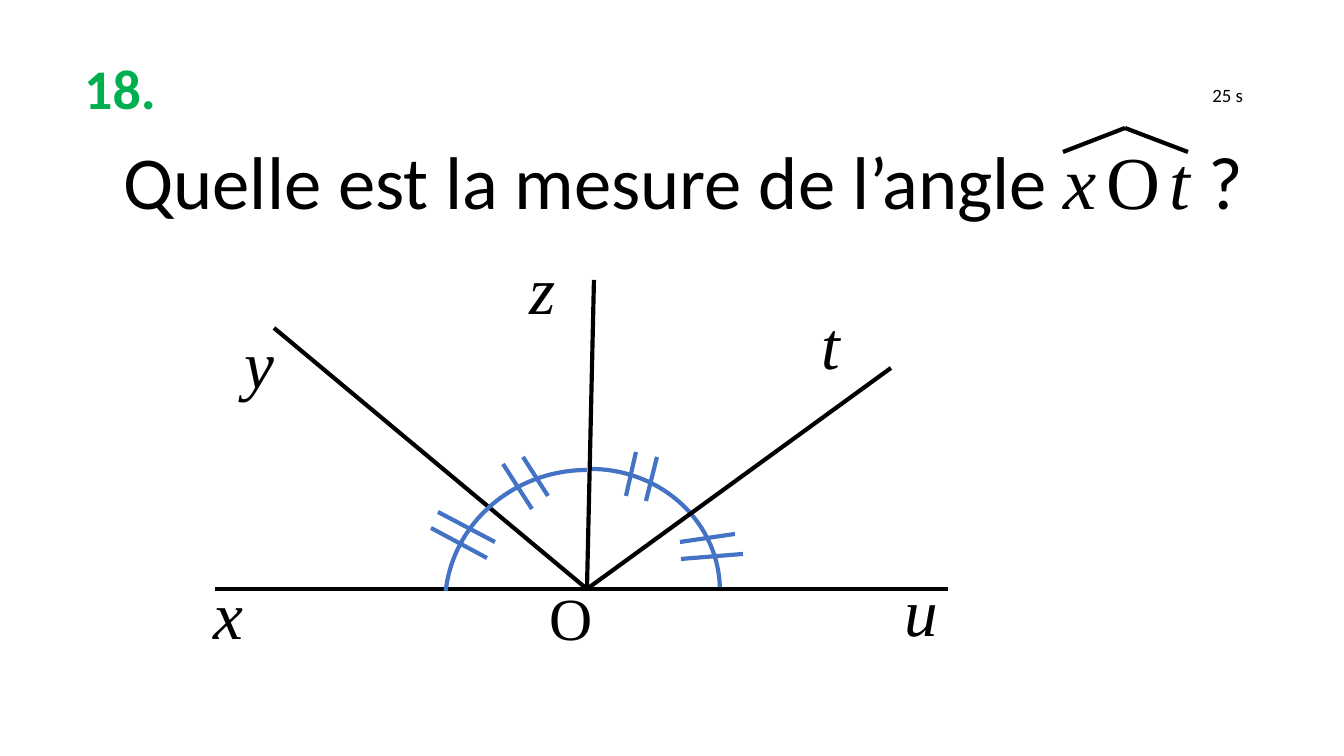
from lxml import etree
from pptx import Presentation
from pptx import util as u
from pptx.dml.color import RGBColor
from pptx.enum import shapes, text
from pptx.oxml.ns import qn

EMU_PER_PX = 914400 / 134.4
SANS, SERIF = "Calibri", "Times New Roman"
BLACK, GREEN, BLUE = "000000", "00B050", "4472C4"


def px(length):
    return u.Emu(round(length * EMU_PER_PX))


def color(code):
    return RGBColor.from_string(code)


class Sketch:
    """Holds the line style and the slide being drawn."""

    line_width = u.Pt(2.25)

    def __init__(self, page):
        self.page = page

    def style_span(self, span, size, font=SANS, ink=BLACK, bold=False, italic=False):
        span.font.size, span.font.name = u.Pt(size), font
        span.font.bold, span.font.italic = bold, italic
        span.font.color.rgb = color(ink)

    def title(self, left, top, width, height, pieces):
        """Fill the title from (words, size, font, italic) pieces."""
        box = self.page.shapes.title
        box.left, box.top, box.width, box.height = map(px, (left, top, width, height))
        frame = box.text_frame
        frame.word_wrap = True
        frame.auto_size = text.MSO_AUTO_SIZE.NONE
        frame.vertical_anchor = text.MSO_ANCHOR.MIDDLE
        para = frame.paragraphs[0]
        para.alignment = text.PP_ALIGN.CENTER
        for words, size, font, italic in pieces:
            span = para.add_run()
            span.text = words
            self.style_span(span, size, font, italic=italic)

    def label(self, left, top, width, height, words, size, wrap=True, **style):
        box = self.page.shapes.add_textbox(*map(px, (left, top, width, height)))
        frame = box.text_frame
        frame.word_wrap = wrap
        frame.text = words
        self.style_span(frame.paragraphs[0].runs[0], size, **style)

    def line(self, start, end, ink=BLACK):
        line = self.page.shapes.add_connector(
            shapes.MSO_CONNECTOR.STRAIGHT, *map(px, (*start, *end)))
        line.line.width = self.line_width
        line.line.color.rgb = color(ink)
        etree.SubElement(line._element.spPr, qn("a:effectLst"))

    def arc(self, left, top, width, height, end_degrees=360, mirrored=False):
        """Draw clockwise from the top to end_degrees, then mirror if asked."""
        arc = self.page.shapes.add_shape(
            shapes.MSO_SHAPE.ARC, *map(px, (left, top, width, height)))
        arc.shadow.inherit = False
        arc.fill.background()
        arc.line.width = self.line_width
        arc.line.color.rgb = color(BLUE)
        # Angles are stored in 1/60000 degree, adjustments in units of 100000.
        arc.adjustments[0] = 270 * 0.6
        arc.adjustments[1] = end_degrees % 360 * 0.6
        if mirrored:
            arc._element.spPr.xfrm.set("flipH", "1")


def main():
    deck = Presentation()
    deck.slide_width, deck.slide_height = px(1344), px(756)
    page = deck.slides.add_slide(deck.slide_layouts[5])
    sketch = Sketch(page)

    sketch.label(71, 47, 99, 82, "18.", 30, wrap=False, ink=GREEN, bold=True)
    sketch.label(1195, 77, 78, 36, " 25 s", 10.1)
    sketch.title(43, 128, 1281, 104, [
        ("Quelle est la mesure de l’angle ", 40, SANS, False),
        ("x", 40, SERIF, True),
        (" ", 20, SERIF, True),
        ("O", 40, SERIF, False),
        (" ", 20, SERIF, False),
        ("t ", 40, SERIF, True),
        ("?", 40, SANS, False),
    ])
    hat_top = (1125, 128)
    for hat_end in ((1063, 152), (1188, 152)):
        sketch.line(hat_end, hat_top)

    sketch.arc(462, 469, 258, 243)
    vertex = (587, 589)
    sketch.line((948, 589), (215, 589))
    for ray_end in ((274, 328), (594, 280), (891, 368)):
        sketch.line(ray_end, vertex)
    sketch.arc(445, 470, 284, 270, end_degrees=354.32, mirrored=True)

    equal_angle_marks = [
        ((431, 528), (487, 558)), ((438, 512), (495, 542)),
        ((503, 464), (532, 509)), ((523, 457), (548, 496)),
        ((681, 559), (743, 554)), ((680, 542), (735, 534)),
        ((636, 452), (626, 496)), ((657, 457), (646, 501)),
    ]
    for start, end in equal_angle_marks:
        sketch.line(start, end, BLUE)

    ray_names = [("x", 200, 566), ("y", 231, 315), ("z", 516, 241),
                 ("t", 808, 296), ("u", 891, 563)]
    for name, left, top in ray_names:
        sketch.label(left, top, 74, 134, name, 36, font=SERIF, italic=True)
    sketch.label(536, 574, 101, 121, "O", 32, wrap=False, font=SERIF)

    deck.save("out.pptx")


if __name__ == "__main__":
    main()
